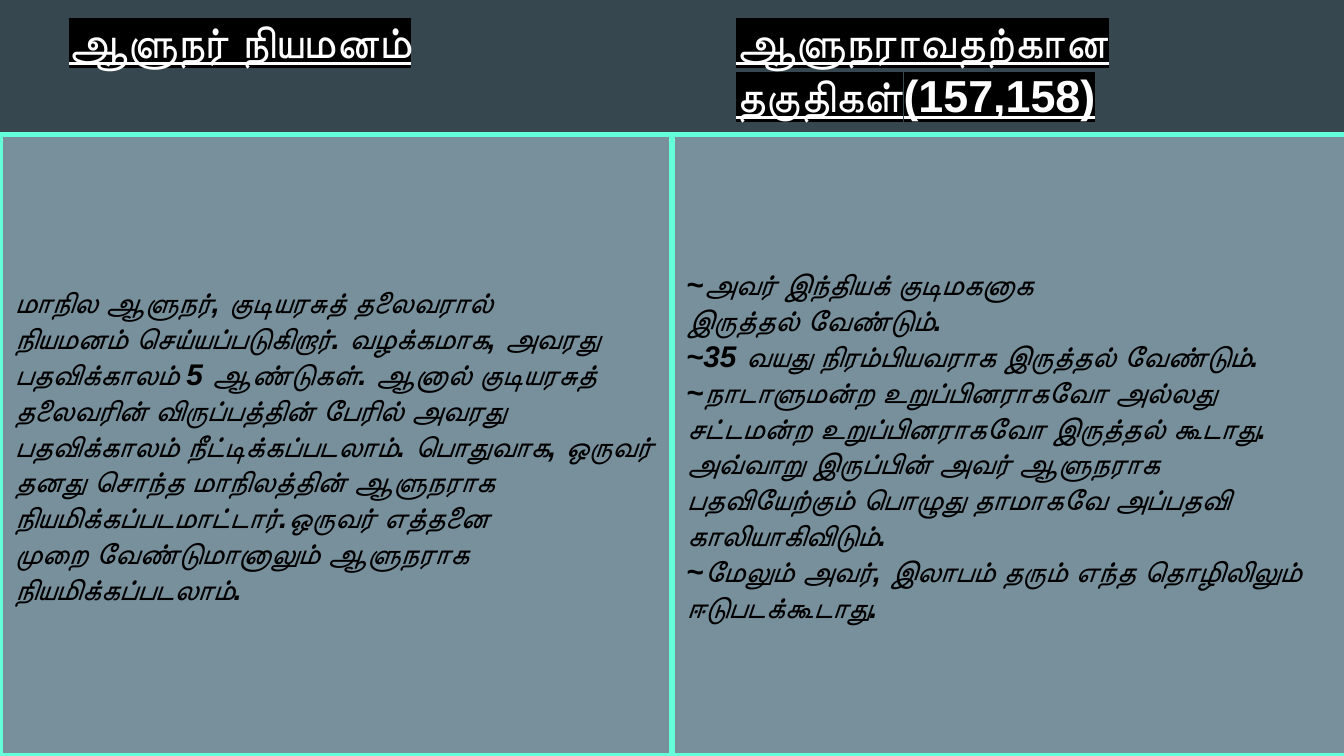
from lxml import etree
from pptx import Presentation
from pptx.dml.color import RGBColor
from pptx.enum.shapes import MSO_SHAPE
from pptx.enum.text import MSO_ANCHOR, MSO_AUTO_SIZE, PP_ALIGN
from pptx.oxml.ns import qn
from pptx.util import Emu, Pt

RECTANGLE = MSO_SHAPE.RECTANGLE
TOP, MIDDLE = MSO_ANCHOR.TOP, MSO_ANCHOR.MIDDLE
GROW = MSO_AUTO_SIZE.SHAPE_TO_FIT_TEXT
LEFT = PP_ALIGN.LEFT

EMU_PER_PX = 9525
SLIDE_W, SLIDE_H = 960, 540
HEADER_H = 96
PANEL_W = 482
FONT = "Arial"

APPOINTMENT = [
    "மாநில ஆளுநர், குடியரசுத் தலைவரால்",
    "நியமனம் செய்யப்படுகிறார். வழக்கமாக, அவரது பதவிக்காலம் 5 ஆண்டுகள். "
    "ஆனால் குடியரசுத் தலைவரின் விருப்பத்தின் பேரில் அவரது",
    "பதவிக்காலம் நீட்டிக்கப்படலாம். பொதுவாக, ஒருவர் தனது சொந்த மாநிலத்தின் ஆளுநராக",
    "நியமிக்கப்படமாட்டார்.ஒருவர் எத்தனை",
    "முறை வேண்டுமானாலும் ஆளுநராக",
    "நியமிக்கப்படலாம்.",
]
QUALIFICATIONS = [
    "~அவர் இந்தியக் குடிமகனாக",
    "இருத்தல் வேண்டும்.",
    "~35 வயது நிரம்பியவராக இருத்தல் வேண்டும்.",
    "~நாடாளுமன்ற உறுப்பினராகவோ அல்லது",
    "சட்டமன்ற உறுப்பினராகவோ இருத்தல் கூடாது.",
    "அவ்வாறு இருப்பின் அவர் ஆளுநராக",
    "பதவியேற்கும் பொழுது தாமாகவே அப்பதவி",
    "காலியாகிவிடும்.",
    "~மேலும் அவர், இலாபம் தரும் எந்த தொழிலிலும்",
    "ஈடுபடக்கூடாது.",
]


def px(length):
    return Emu(length * EMU_PER_PX)


def color(hex_code):
    return RGBColor.from_string(hex_code)


def write_text(frame, lines, *, size, text_color, anchor=TOP, italic=None,
               underline=None, highlight=None):
    """Fill a text frame with one bold paragraph for each line."""
    frame.word_wrap = True
    frame.vertical_anchor = anchor
    frame.margin_left = frame.margin_right = px(10)
    frame.margin_top = frame.margin_bottom = px(10)
    for index, line in enumerate(lines):
        paragraph = frame.paragraphs[0] if index == 0 else frame.add_paragraph()
        paragraph.alignment = LEFT
        run = paragraph.add_run()
        run.text = line
        font = run.font
        font.size = Pt(size)
        font.bold, font.italic, font.underline = True, italic, underline
        font.color.rgb = color(text_color)
        font.name = FONT
        set_script_font(run, highlight)


def set_script_font(run, highlight):
    """Give the Tamil letters their font and, if asked, a highlight."""
    properties = run.font._element
    latin = properties.find(qn("a:latin"))
    complex_script = etree.Element(qn("a:cs"), typeface=FONT)
    latin.addnext(complex_script)
    if highlight:
        marker = etree.Element(qn("a:highlight"))
        etree.SubElement(marker, qn("a:srgbClr"), val=highlight)
        latin.addprevious(marker)


def add_heading(slide, heading, left, width, height):
    box = slide.shapes.add_textbox(px(left), px(0), px(width), px(height))
    write_text(box.text_frame, [heading], size=24, text_color="FFFFFF",
               underline=True, highlight="000000")
    box.text_frame.auto_size = GROW


def add_panel(slide, lines, left):
    panel = slide.shapes.add_shape(RECTANGLE, px(left), px(HEADER_H),
                                   px(PANEL_W), px(SLIDE_H - HEADER_H))
    panel.shadow.inherit = False
    panel.fill.solid()
    panel.fill.fore_color.rgb = color("78909C")
    panel.line.color.rgb = color("64FFDA")
    panel.line.width = Pt(3)
    write_text(panel.text_frame, lines, size=16, text_color="000000",
               anchor=MIDDLE, italic=True)


def main():
    deck = Presentation()
    deck.slide_width, deck.slide_height = px(SLIDE_W), px(SLIDE_H)
    slide = deck.slides.add_slide(deck.slide_layouts[6])
    slide.background.fill.solid()
    slide.background.fill.fore_color.rgb = color("37474F")

    add_heading(slide, "ஆளுநர் நியமனம்", 39, 721, 58)
    add_panel(slide, APPOINTMENT, 0)
    add_panel(slide, QUALIFICATIONS, SLIDE_W // 2)
    add_heading(slide, "ஆளுநராவதற்கான தகுதிகள்(157,158)", 516, PANEL_W, HEADER_H)
    deck.save("out.pptx")


if __name__ == "__main__":
    main()
